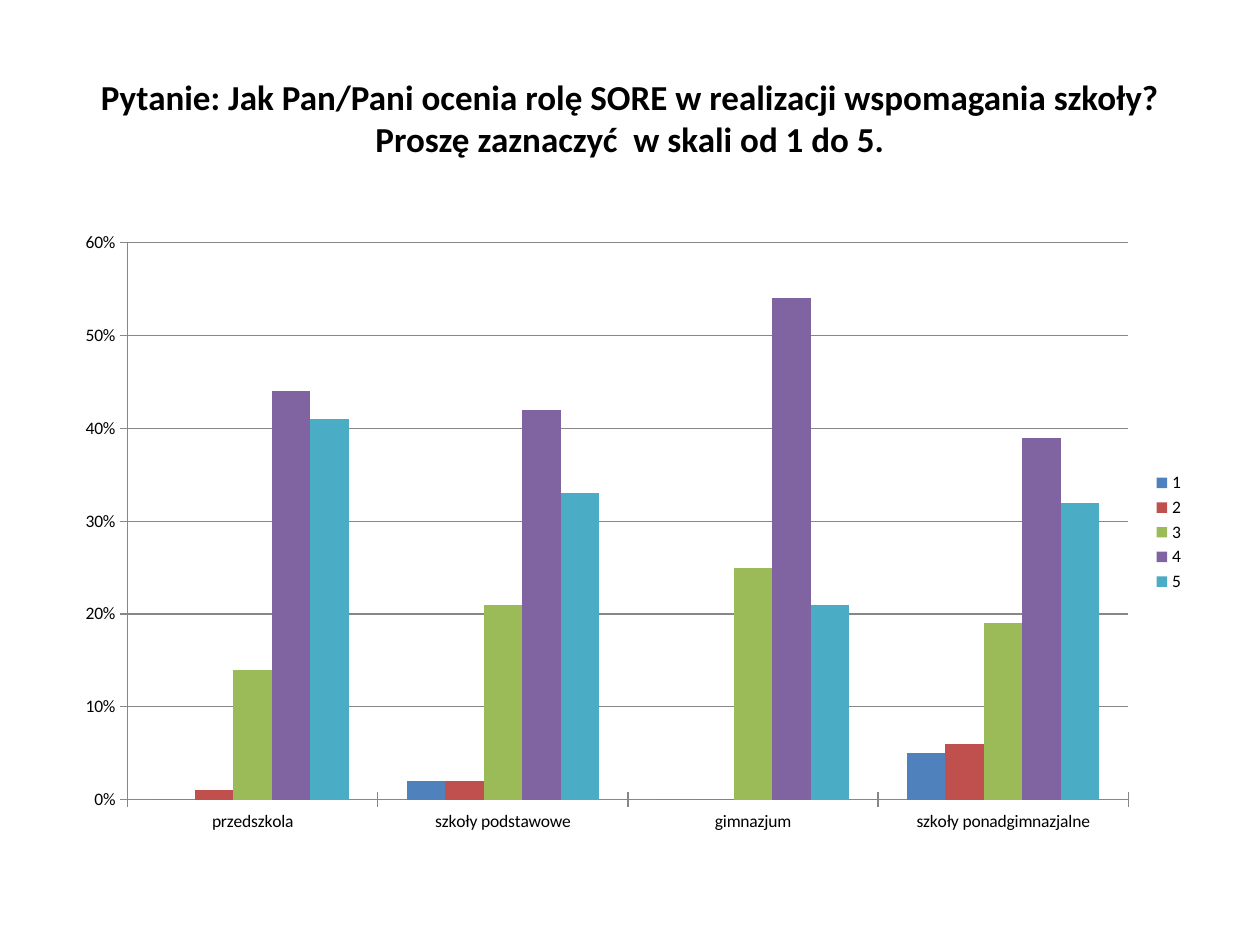
"""Build a slide with a clustered column chart of ratings by school type."""
import pptx
import pptx.chart.data
import pptx.dml.color
import pptx.enum.chart
import pptx.enum.text
import pptx.util

Inches = pptx.util.Inches
RGB = pptx.dml.color.RGBColor.from_string

COLORS = {
    "text": "000000",
    "line": "878787",
    "1": "4F81BD",
    "2": "C0504D",
    "3": "9BBB59",
    "4": "8064A2",
    "5": "4BACC6",
}
SCHOOLS = ["przedszkola", "szkoły podstawowe", "gimnazjum", "szkoły ponadgimnazjalne"]
RATINGS = {
    "1": [0, 0.02, 0, 0.05],
    "2": [0.01, 0.02, 0, 0.06],
    "3": [0.14, 0.21, 0.25, 0.19],
    "4": [0.44, 0.42, 0.54, 0.39],
    "5": [0.41, 0.33, 0.21, 0.32],
}

deck = pptx.Presentation()
deck.slide_width = Inches(10)
deck.slide_height = Inches(7.5)
page = deck.slides.add_slide(deck.slide_layouts[6])

title = page.shapes.add_textbox(Inches(0.5), Inches(0.31), Inches(9), Inches(1.25))
title.text_frame.word_wrap = True
title.text_frame.vertical_anchor = pptx.enum.text.MSO_ANCHOR.MIDDLE
para = title.text_frame.paragraphs[0]
para.alignment = pptx.enum.text.PP_ALIGN.CENTER
span = para.add_run()
span.text = (
    "Pytanie: Jak Pan/Pani ocenia rolę SORE w realizacji wspomagania szkoły? "
    "Proszę zaznaczyć  w skali od 1 do 5."
)
span.font.name = "Calibri"
span.font.size = pptx.util.Pt(20)
span.font.bold = True
span.font.color.rgb = RGB(COLORS["text"])

data = pptx.chart.data.CategoryChartData(number_format="0%")
data.categories = SCHOOLS
for rating, shares in RATINGS.items():
    data.add_series(rating, shares)

chart = page.shapes.add_chart(
    pptx.enum.chart.XL_CHART_TYPE.COLUMN_CLUSTERED,
    Inches(0.5), Inches(1.75), Inches(9), Inches(4.95), data,
).chart
chart.has_title = False
chart.font.name = "Calibri"
chart.font.size = pptx.util.Pt(10)
chart.font.color.rgb = RGB(COLORS["text"])
chart.has_legend = True
chart.legend.position = pptx.enum.chart.XL_LEGEND_POSITION.RIGHT
chart.legend.include_in_layout = False

plot = chart.plots[0]
plot.gap_width = 150
plot.overlap = 0
plot.vary_by_categories = False
for series in plot.series:
    series.format.fill.solid()
    series.format.fill.fore_color.rgb = RGB(COLORS[series.name])

shares_axis = chart.value_axis
shares_axis.minimum_scale = 0
shares_axis.maximum_scale = 0.6
shares_axis.major_unit = 0.1
shares_axis.has_major_gridlines = True
shares_axis.tick_labels.number_format = "0%"
shares_axis.tick_labels.number_format_is_linked = False
for axis in (chart.category_axis, shares_axis):
    axis.major_tick_mark = pptx.enum.chart.XL_TICK_MARK.CROSS
for part in (chart.category_axis, shares_axis, shares_axis.major_gridlines):
    part.format.line.color.rgb = RGB(COLORS["line"])
    part.format.line.width = pptx.util.Pt(0.75)

deck.save("out.pptx")
